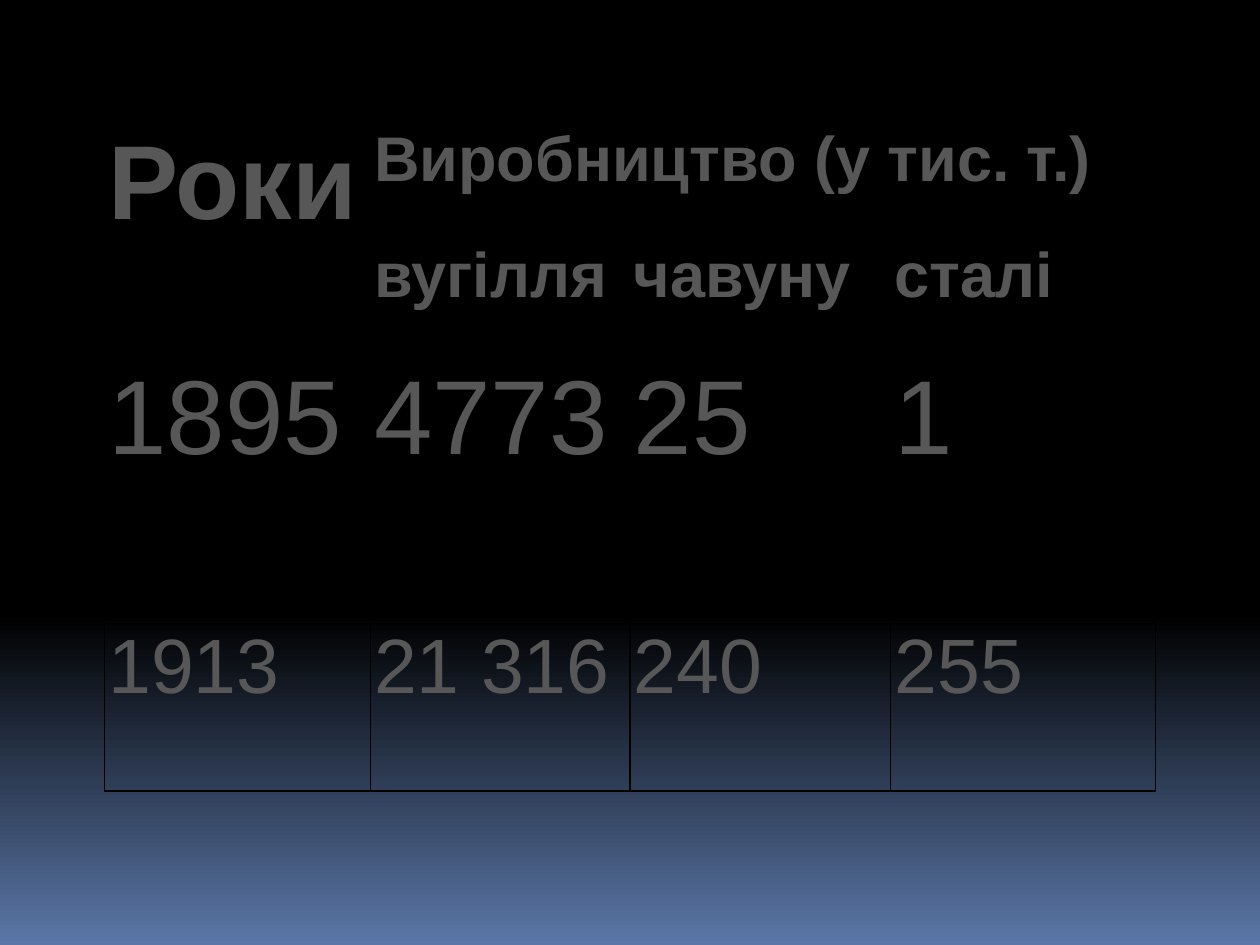
from copy import deepcopy

from lxml import etree
from pptx import Presentation
from pptx.dml.color import RGBColor
from pptx.enum.text import PP_ALIGN
from pptx.oxml.ns import qn
from pptx.util import Inches, Pt

JUSTIFY = PP_ALIGN.JUSTIFY
BLANK_LAYOUT = 6


def rgb(value):
    return RGBColor.from_string(value)


class Deck:
    """Holds the style and the current slide."""
    font = "Arial"
    ink = "575757"
    border = "000000"
    border_width = Pt(1)
    inset = Inches(0.03)

    def __init__(self, width, height):
        self.prs = Presentation()
        self.prs.slide_width, self.prs.slide_height = Inches(width), Inches(height)
        self.s = self.prs.slides.add_slide(self.prs.slide_layouts[BLANK_LAYOUT])

    def background(self, stops):
        fill = self.s.background.fill
        fill.gradient()
        fill.gradient_angle = 270
        last = fill.gradient_stops[1]._gs
        for _ in stops[2:]:
            last.addnext(deepcopy(last))
        for stop, (position, color) in zip(fill.gradient_stops, stops):
            stop.position = position
            stop.color.rgb = rgb(color)

    def table(self, left, top, cols, rows, merges, entries):
        """left and top are shares of the slide; cols and rows are inches."""
        sp = self.s.shapes.add_table(
            len(rows), len(cols),
            int(left * self.prs.slide_width), int(top * self.prs.slide_height),
            Inches(sum(cols)), Inches(sum(rows)))
        table = sp.table
        table.first_row = table.horz_banding = False
        for col, width in zip(table.columns, cols):
            col.width = Inches(width)
        for row, height in zip(table.rows, rows):
            row.height = Inches(height)
        for first, last in merges:
            table.cell(*first).merge(table.cell(*last))
        for cell in table.iter_cells():
            self.frame(cell)
        for (row, col), (text, size, bold) in entries.items():
            self.text(table.cell(row, col), text, size, bold)

    def frame(self, cell):
        cell.fill.background()
        cell.margin_left = cell.margin_right = self.inset
        cell.margin_top = cell.margin_bottom = 0
        tc_pr = cell._tc.get_or_add_tcPr()
        for i, side in enumerate(("lnL", "lnR", "lnT", "lnB")):
            ln = etree.Element(qn("a:" + side), w=str(self.border_width))
            solid = etree.SubElement(ln, qn("a:solidFill"))
            etree.SubElement(solid, qn("a:srgbClr"), val=self.border)
            tc_pr.insert(i, ln)

    def text(self, cell, text, size, bold):
        p = cell.text_frame.paragraphs[0]
        p.alignment = JUSTIFY
        r = p.add_run()
        r.text = text
        r.font.name, r.font.size, r.font.bold = self.font, Pt(size), bold
        r.font.color.rgb = rgb(self.ink)


def main():
    deck = Deck(10, 7.5)
    deck.background([(0, "000000"), (0.65, "000000"), (1, "5B77A8")])

    # Two-level header
    entries = {(0, 0): ("Роки", 60, True),
               (0, 1): ("Виробництво (у тис. т.)", 36, True)}
    for col, name in enumerate(("вугілля", "чавуну", "сталі"), start=1):
        entries[1, col] = (name, 36, True)

    # Output by year
    years = [(60, ("1895", "4773", "25", "1")),
             (44, ("1913", "21 316", "240", "255"))]
    for row, (size, values) in enumerate(years, start=2):
        for col, value in enumerate(values):
            entries[row, col] = (value, size, False)

    deck.table(0.083, 0.132,
               cols=[2.11, 2.06, 2.07, 2.1], rows=[0.92, 0.94, 2.1, 1.33],
               merges=[((0, 0), (1, 0)), ((0, 1), (0, 3))], entries=entries)
    deck.prs.save("out.pptx")


if __name__ == "__main__":
    main()
